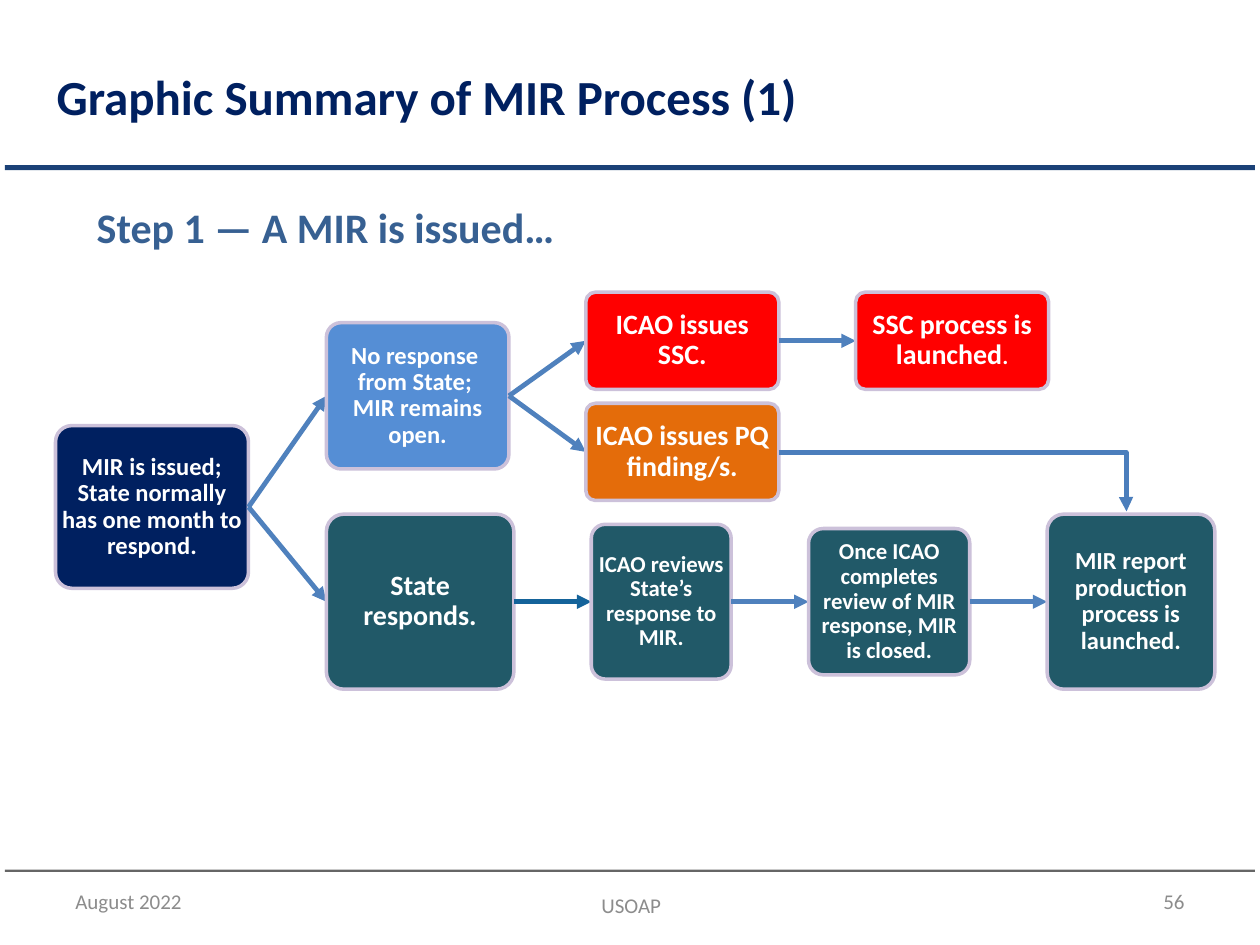
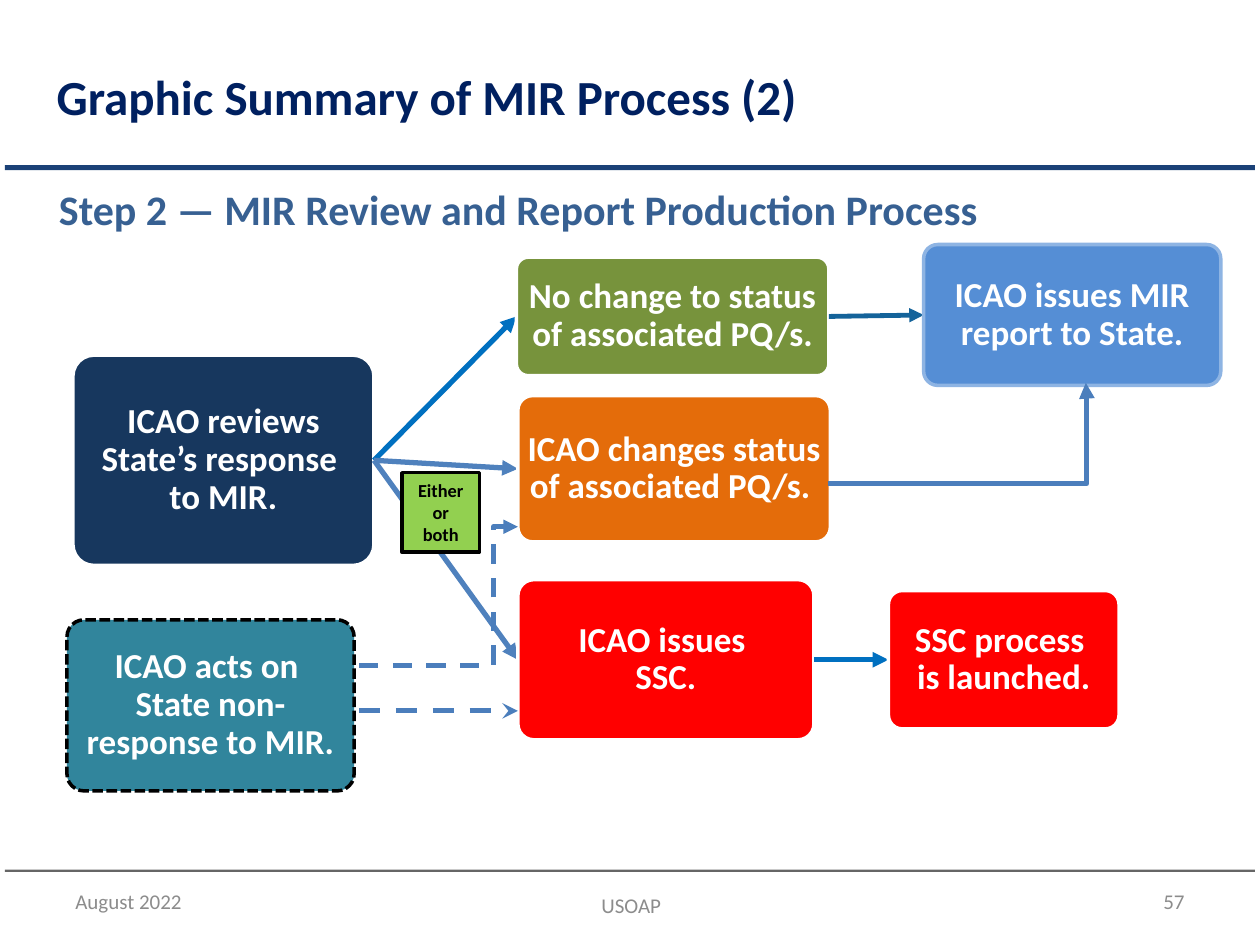
from dataclasses import dataclass

from lxml.etree import SubElement
from pptx import Presentation
from pptx.dml.color import RGBColor as Rgb
from pptx.enum.dml import MSO_LINE as Dash
from pptx.enum.shapes import MSO_CONNECTOR as Wire, MSO_SHAPE as Form
from pptx.enum.text import MSO_ANCHOR as Anchor, MSO_AUTO_SIZE as Fit, PP_ALIGN as Align
from pptx.oxml.ns import qn
from pptx.util import Cm, Pt


@dataclass(frozen=True)
class Theme:
    font: str = "Calibri"
    white: str = "FFFFFF"
    black: str = "000000"
    navy: str = "002060"
    ink: str = "17375E"
    step: str = "376092"
    band: str = "1B4177"
    rule: str = "666666"
    grey: str = "8C8C8C"
    lilac: str = "CCC1DA"
    sky: str = "558ED5"
    pale: str = "8EB4E3"
    red: str = "FF0000"
    orange: str = "E46C0A"
    teal: str = "215968"
    aqua: str = "31859C"
    green: str = "77933C"
    lime: str = "92D050"
    steel: str = "4F81BD"
    bend: str = "4B7EBC"
    deep: str = "14639A"
    blue: str = "0070C0"
    title: float = 28
    head: float = 24
    large: float = 20
    mid: float = 16
    text: float = 14
    small: float = 13
    foot: float = 12
    tag: float = 10.5


T = Theme()


class Deck:
    def __init__(self):
        self.prs = Presentation()
        self.prs.slide_width, self.prs.slide_height = Cm(25.4), Cm(19.05)
        self.slide = None
        self.edge = T.lilac

    def page(self, title, number, edge):
        """Start a slide with its title, bands and footer."""
        self.slide = self.prs.slides.add_slide(self.prs.slide_layouts[5])
        self.edge = edge
        for top, high, fill in ((17.53, 0.05, T.rule), (3.33, 0.1, T.band)):
            bar = self.shape(Form.RECTANGLE, 0.1, top, 25.2, high, fill)
            bar.line.fill.background()
        head = self.slide.shapes.title
        head.left, head.top, head.width, head.height = Cm(0.89), Cm(0.74), Cm(18.39), Cm(2.39)
        head.text_frame.auto_size = Fit.NONE
        self.letter(head, title, T.title, T.navy)
        self.label(1.27, 17.65, 5.92, 1.02, "August 2022", T.foot, T.grey, bold=False)
        self.label(8.7, 17.73, 8.05, 1.02, "USOAP", T.foot, T.grey, Align.CENTER, False)
        self.label(18.21, 17.65, 5.92, 1.02, number, T.foot, T.grey, Align.RIGHT, False)

    def run(self, para, text, size, color, bold=True):
        """Add text to a paragraph, one run per line."""
        for row, line in enumerate(text.split("\n")):
            if row:
                para.add_line_break()
            run = para.add_run()
            run.text = line
            font = run.font
            font.name, font.size, font.bold = T.font, Pt(size), bold
            font.color.rgb = Rgb.from_string(color)

    def letter(self, shape, text, size, color, align=Align.LEFT, bold=True):
        """Put one wrapped, vertically centred paragraph into a shape."""
        frame = shape.text_frame
        frame.word_wrap = True
        frame.vertical_anchor = Anchor.MIDDLE
        para = frame.paragraphs[0]
        para.alignment = align
        self.run(para, text, size, color, bold)
        return para

    def label(self, x, y, wide, high, text, size, color, align=Align.LEFT, bold=True):
        area = self.slide.shapes.add_textbox(Cm(x), Cm(y), Cm(wide), Cm(high))
        self.letter(area, text, size, color, align, bold)

    def shape(self, form, x, y, wide, high, fill):
        item = self.slide.shapes.add_shape(form, Cm(x), Cm(y), Cm(wide), Cm(high))
        item.shadow.inherit = False
        item.fill.solid()
        item.fill.fore_color.rgb = Rgb.from_string(fill)
        return item

    def stroke(self, item, color, width, dash=None):
        item.line.color.rgb = Rgb.from_string(color)
        item.line.width = Pt(width)
        if dash:
            item.line.dash_style = dash

    def box(self, x, mid, wide, high, fill, text, size, edge=None, dash=None):
        """Add a rounded box centred on the height mid."""
        item = self.shape(Form.ROUNDED_RECTANGLE, x, mid - high / 2, wide, high, fill)
        item.adjustments[0] = 0.1
        self.stroke(item, edge or self.edge, 2, dash)
        frame = item.text_frame
        frame.margin_left = frame.margin_right = Cm(0.03)
        frame.margin_top = frame.margin_bottom = Cm(0.03)
        self.letter(item, text, size, T.white, Align.CENTER).line_spacing = 0.9
        return item

    def tag(self, x, y, wide, high, text):
        item = self.shape(Form.RECTANGLE, x, y, wide, high, T.lime)
        self.stroke(item, T.black, 2)
        self.letter(item, text, T.tag, T.black, Align.CENTER)

    def arrow(self, start, end, color=T.bend, width=2.75, turn=None, dash=None, tip="triangle"):
        """Draw an arrow; turn is the share of its width where it bends."""
        kind = Wire.STRAIGHT if turn is None else Wire.ELBOW
        line = self.slide.shapes.add_connector(kind, *map(Cm, start + end))
        self.stroke(line, color, width, dash)
        props = line._element.spPr
        SubElement(props.find(qn("a:ln")), qn("a:tailEnd"), type=tip)
        SubElement(props, qn("a:effectLst"))
        if turn is not None:
            guides = props.find(qn("a:prstGeom")).find(qn("a:avLst"))
            SubElement(guides, qn("a:gd"), name="adj1", fmla=f"val {round(turn * 100000)}")
        return line

    def link(self, start, end, color=T.steel, width=2.75):
        """Join the right side of one box to the left side of the next."""
        line = self.arrow((0, 0), (1, 1), color, width)
        line.begin_connect(start, 3)
        line.end_connect(end, 1)
        end._element.addprevious(line._element)


def issue(deck):
    deck.page("Graphic Summary of MIR Process (1)", "56", T.lilac)
    first = deck.box(1.12, 10.22, 3.89, 3.28, T.navy,
                     "MIR is issued; State normally has one month to respond.", T.text)
    mute = deck.box(6.58, 7.98, 3.68, 2.95, T.sky,
                    "No response \nfrom State; \nMIR remains open.", T.text)
    alert = deck.box(11.81, 6.87, 3.89, 1.96, T.red, "ICAO issues SSC.", T.mid)
    launch = deck.box(17.25, 6.87, 3.89, 1.96, T.red, "SSC process is launched", T.mid)
    deck.run(launch.text_frame.paragraphs[0], ".", T.small, T.white)
    finding = deck.box(11.81, 9.11, 3.89, 1.96, T.orange, "ICAO issues PQ finding/s.", T.mid)
    for start, end in ((first, mute), (mute, alert), (alert, launch), (mute, finding)):
        deck.link(start, end)

    x, gap, last = 6.58, 1.56, first
    for wide, high, text, size, color in (
        (3.78, 3.53, "State responds.", T.mid, T.steel),
        (2.82, 3.12, "ICAO reviews State’s response to MIR.", T.small, T.deep),
        (3.25, 2.95, "Once ICAO completes review of MIR response, MIR is closed.",
         T.small, T.steel),
        (3.38, 3.53, "MIR report production process is launched.", T.text, T.steel),
    ):
        item = deck.box(x, 12.13, wide, high, T.teal, text, size)
        deck.link(last, item, color)
        x, last = x + wide + gap, item

    deck.label(1.7, 3.94, 11, 1.27, "Step 1 — A MIR is issued…", T.head, T.step)
    deck.arrow((15.7, 9.12), (22.71, 10.31), turn=0.999)


def review(deck):
    deck.page("Graphic Summary of MIR Process (2)", "57", T.white)
    first = deck.box(1.47, 9.28, 6.07, 4.24, T.ink,
                     "ICAO reviews State’s response \nto MIR.", T.large)
    keep = deck.box(10.41, 6.38, 6.3, 2.39, T.green,
                    "No change to status of associated PQ/s.", T.large)
    report = deck.box(18.62, 6.35, 5.99, 2.84, T.sky,
                      "ICAO issues MIR report to State.", T.large, T.pale)
    change = deck.box(10.44, 9.45, 6.3, 2.95, T.orange,
                      "ICAO changes status of associated PQ/s. ", T.large)
    alert = deck.box(10.44, 13.3, 5.97, 3.23, T.red, "ICAO issues \nSSC.", T.large)
    launch = deck.box(17.91, 13.3, 4.65, 2.79, T.red, "SSC process \nis launched.", T.large)
    deck.box(1.35, 14.22, 5.79, 3.45, T.aqua, "ICAO acts on \nState non-response to MIR.",
             T.large, T.black, Dash.SQUARE_DOT)
    deck.link(first, keep, T.blue, 3)
    deck.link(keep, report, T.deep)
    deck.link(first, change, width=3)
    deck.link(first, alert, width=3)
    deck.link(alert, launch, T.blue, 3)

    deck.label(0.94, 3.58, 23.19, 1.27,
               "Step 2 — MIR Review and Report Production Process", T.head, T.step)
    deck.tag(8.1, 9.53, 1.57, 1.6, "Either or both")
    deck.arrow((16.69, 9.75), (21.89, 7.72), width=3, turn=1.004)
    deck.arrow((7.24, 14.33), (10.44, 14.33), width=3, dash=Dash.DASH, tip="stealth")
    deck.arrow((7.24, 13.41), (10.44, 10.62), turn=0.846, dash=Dash.DASH)


def main():
    deck = Deck()
    issue(deck)
    review(deck)
    deck.prs.save("out.pptx")


if __name__ == "__main__":
    main()
